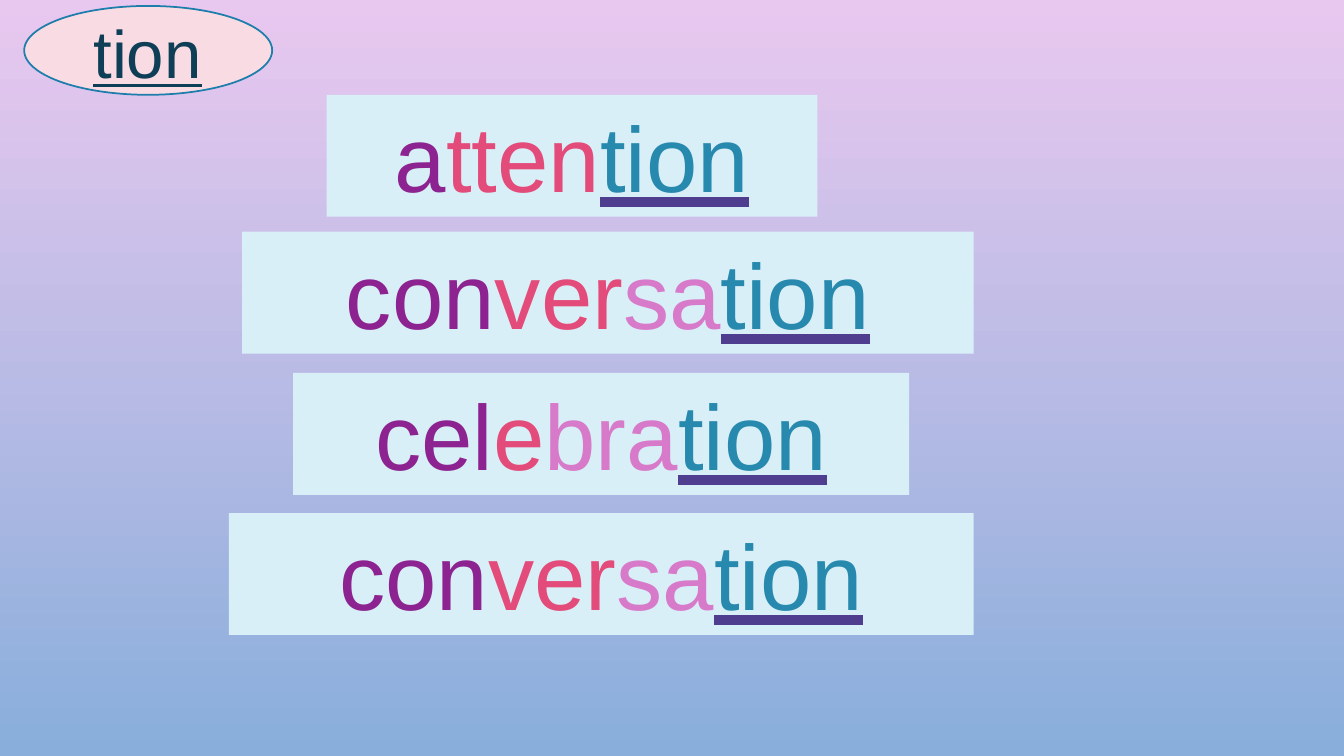
from lxml import etree
from pptx import Presentation
from pptx import util as u
from pptx.dml.color import RGBColor
from pptx.enum import shapes, text
from pptx.oxml.ns import qn

# Content: syllables of each word, then box left, top and width in cm
ENDING = "tion"
WORDS = [
    (["a", "tten"], 8.23, 2.39, 12.37),
    (["con", "ver", "sa"], 6.1, 5.84, 18.44),
    (["cel", "e", "bra"], 7.39, 9.4, 15.52),
    (["con", "ver", "sa"], 5.77, 12.93, 18.77),
]
BOX_HEIGHT = 3.07
SYLLABLE_COLORS = ["8C2390", "E34B7A", "D87ACA"]
ENDING_COLOR = "2689AD"
UNDERLINE_COLOR = "4F3D8F"
FONT = "Arial"


def rgb(value):
    return RGBColor.from_string(value)


def add_panel(kind, left, top, width, height, color):
    sp = slide.shapes.add_shape(kind, u.Cm(left), u.Cm(top), u.Cm(width), u.Cm(height))
    sp.shadow.inherit = False
    sp.fill.solid()
    sp.fill.fore_color.rgb = rgb(color)
    sp.line.fill.background()
    return sp


def format_text(sp, size):
    tf = sp.text_frame
    tf.word_wrap = True
    tf.auto_size = text.MSO_AUTO_SIZE.NONE
    tf.vertical_anchor = text.MSO_ANCHOR.TOP
    p = tf.paragraphs[0]
    p.alignment = text.PP_ALIGN.CENTER
    p.font.name = FONT
    p.font.size = u.Pt(size)
    return p


def add_syllable(p, syllable, color):
    r = p.add_run()
    r.text = syllable
    r.font.color.rgb = rgb(color)
    return r


def underline_heavily(r, color):
    r.font.underline = text.MSO_TEXT_UNDERLINE_TYPE.HEAVY_LINE
    u_fill = etree.SubElement(r.font._element, qn("a:uFill"))
    solid = etree.SubElement(u_fill, qn("a:solidFill"))
    etree.SubElement(solid, qn("a:srgbClr"), val=color)


prs = Presentation()
prs.slide_width, prs.slide_height = u.Cm(33.87), u.Cm(19.05)
slide = prs.slides.add_slide(prs.slide_layouts[5])

# Background fading downwards
fill = slide.background.fill
fill.gradient()
fill.gradient_angle = 270
for stop, (position, color) in zip(fill.gradient_stops, [(0, "E9C8EF"), (1, "89AEDB")]):
    stop.position = position
    stop.color.rgb = rgb(color)

# Ending in an oval, with the title in front of it
oval = add_panel(shapes.MSO_SHAPE.OVAL, 0.61, 0.15, 6.25, 2.24, "F9DBE4")
oval.line.color.rgb = rgb("1D7EAB")
oval.line.width = u.Pt(1.25)

title = slide.shapes.title
oval._element.addnext(title._element)
title.left, title.top, title.width, title.height = map(u.Cm, (0.28, 0.15, 6.88, 2.31))
p = format_text(title, 48)
add_syllable(p, ENDING, "0F3F56").font.underline = True

# Words split into coloured syllables
for syllables, left, top, width in WORDS:
    box = add_panel(shapes.MSO_SHAPE.RECTANGLE, left, top, width, BOX_HEIGHT, "D9EFF7")
    p = format_text(box, 66)
    for syllable, color in zip(syllables, SYLLABLE_COLORS):
        add_syllable(p, syllable, color)
    underline_heavily(add_syllable(p, ENDING, ENDING_COLOR), UNDERLINE_COLOR)

prs.save("out.pptx")
